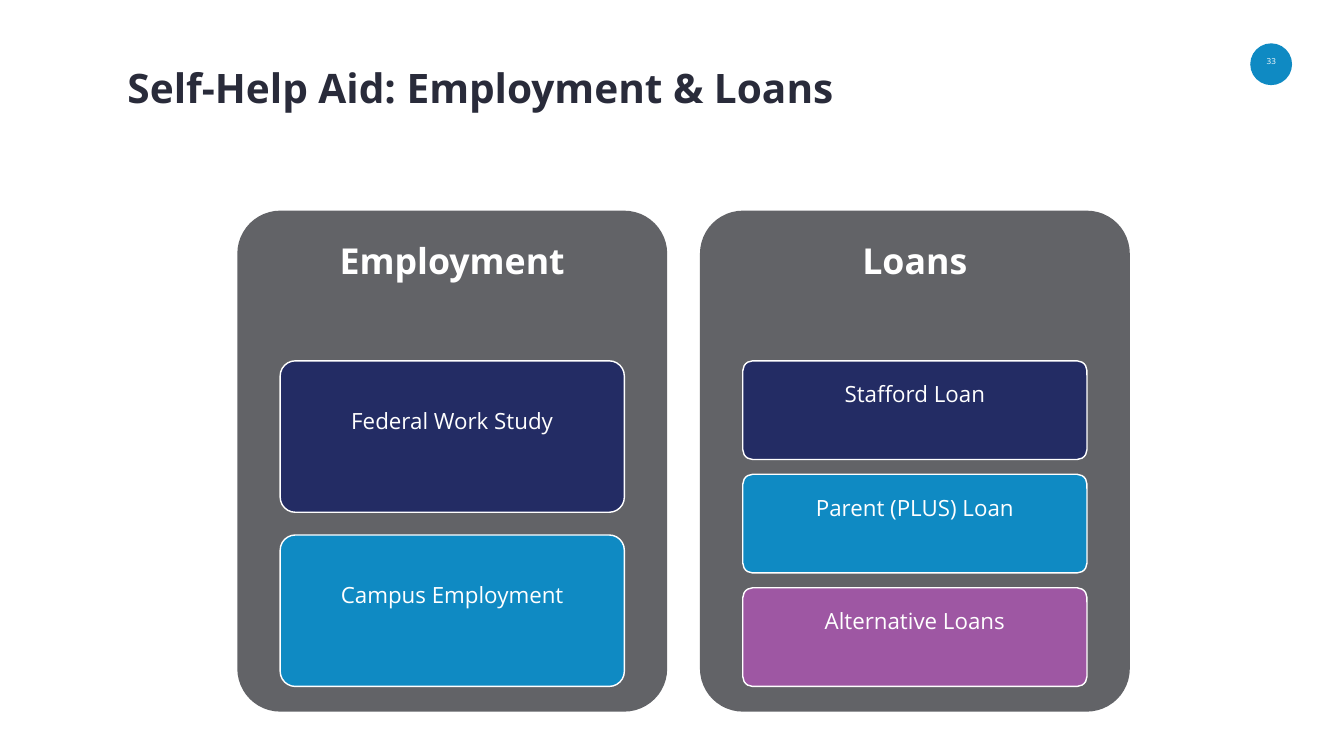
from dataclasses import dataclass

from pptx import Presentation
from pptx.dml.color import RGBColor
from pptx.enum.shapes import MSO_SHAPE
from pptx.enum.text import MSO_ANCHOR, MSO_AUTO_SIZE, PP_ALIGN
from pptx.util import Inches, Pt

ROUNDED, OVAL = MSO_SHAPE.ROUNDED_RECTANGLE, MSO_SHAPE.OVAL
TOP, MIDDLE = MSO_ANCHOR.TOP, MSO_ANCHOR.MIDDLE
LEFT, CENTER = PP_ALIGN.LEFT, PP_ALIGN.CENTER
GROW, FIXED = MSO_AUTO_SIZE.SHAPE_TO_FIT_TEXT, MSO_AUTO_SIZE.NONE


@dataclass(frozen=True)
class Theme:
    """Fonts, colours and type sizes of the slide."""
    font: str = "Open Sans"
    ink: str = "292B3A"
    white: str = "FFFFFF"
    panel: str = "626367"
    navy: str = "232C64"
    blue: str = "0F8AC3"
    purple: str = "9E57A3"
    title_size: int = 100
    heading_size: int = 88
    card_size: int = 55
    number_size: int = 20
    baseline: int = 55000


THEME = Theme()
CARD_COLORS = (THEME.navy, THEME.blue, THEME.purple)
AID_TYPES = {
    "Employment": ("Federal Work Study", "Campus Employment"),
    "Loans": ("Stafford Loan", "Parent (PLUS) Loan", "Alternative Loans"),
}
PANEL_LEFT, PANEL_TOP, PANEL_WIDTH, PANEL_HEIGHT = 4.71, 4.18, 8.53, 9.94
PANEL_STEP = 9.18
HEADING_HEIGHT = 2.98
CARD_INSET, CARD_WIDTH = 0.85, 6.83
CARDS_TOP, CARDS_HEIGHT = 7.16, 6.46
GAP_RATIO = 0.15


def apply_format(target, values):
    """Set each attribute of target from a dict of values."""
    for name, value in values.items():
        setattr(target, name, value)


def set_text(holder, text, size, color=THEME.white, bold=False, align=CENTER,
             spacing=0.9, anchor=MIDDLE, margins=(0.06, 0.06), fit=FIXED):
    """Write one raised line of text into a shape or placeholder."""
    frame = holder.text_frame
    side, end = (Inches(margin) for margin in margins)
    apply_format(frame, {
        "word_wrap": True, "auto_size": fit, "vertical_anchor": anchor,
        "margin_left": side, "margin_right": side,
        "margin_top": end, "margin_bottom": end,
    })
    paragraph = frame.paragraphs[0]
    apply_format(paragraph, {"alignment": align, "line_spacing": spacing})
    run = paragraph.add_run()
    run.text = text
    apply_format(run.font, {"name": THEME.font, "size": Pt(size), "bold": bold})
    run.font.color.rgb = RGBColor.from_string(color)
    run.font._element.set("baseline", str(THEME.baseline))


def add_block(slide, kind, box, fill, outlined=False):
    """Add a filled shape, with a white outline if asked for."""
    block = slide.shapes.add_shape(kind, *map(Inches, box))
    block.shadow.inherit = False
    block.fill.solid()
    block.fill.fore_color.rgb = RGBColor.from_string(fill)
    if kind == ROUNDED:
        block.adjustments[0] = 0.1
    if outlined:
        block.line.color.rgb = RGBColor.from_string(THEME.white)
        block.line.width = Pt(2)
    else:
        block.line.fill.background()
    return block


def add_title(slide, text):
    """Move the title placeholder into place and fill it."""
    title = slide.shapes.title
    apply_format(title, {"left": Inches(2.47), "top": Inches(0.98),
                         "width": Inches(17.58), "height": Inches(2.8)})
    set_text(title, text, THEME.title_size, THEME.ink, bold=True,
             align=LEFT, spacing=0.8, fit=GROW)


def add_page_number(slide, number):
    """Add the page number on its round badge."""
    add_block(slide, OVAL, (24.81, 0.86, 0.83, 0.83), THEME.blue)
    label = slide.shapes.add_textbox(*map(Inches, (24.76, 1.05, 0.94, 0.49)))
    set_text(label, number, THEME.number_size, spacing=1.0, anchor=TOP, fit=GROW)


def add_panel(slide, left, heading, cards):
    """Add a panel with its heading and an evenly divided stack of cards."""
    add_block(slide, ROUNDED, (left, PANEL_TOP, PANEL_WIDTH, PANEL_HEIGHT), THEME.panel)
    label = slide.shapes.add_textbox(
        *map(Inches, (left, PANEL_TOP, PANEL_WIDTH, HEADING_HEIGHT)))
    set_text(label, heading, THEME.heading_size, bold=True, margins=(0.37, 0.37))

    count = len(cards)
    height = CARDS_HEIGHT / (count + (count - 1) * GAP_RATIO)
    for row, (name, color) in enumerate(zip(cards, CARD_COLORS)):
        top = CARDS_TOP + row * height * (1 + GAP_RATIO)
        card = add_block(slide, ROUNDED, (left + CARD_INSET, top, CARD_WIDTH, height),
                         color, outlined=True)
        set_text(card, name, THEME.card_size, margins=(0.15, 0.11))


def main():
    """Build the slide and save it."""
    deck = Presentation()
    apply_format(deck, {"slide_width": Inches(26.67), "slide_height": Inches(15)})
    slide = deck.slides.add_slide(deck.slide_layouts.get_by_name("Title Only"))
    add_page_number(slide, "33")
    add_title(slide, "Self-Help Aid: Employment & Loans")
    for column, (heading, cards) in enumerate(AID_TYPES.items()):
        add_panel(slide, PANEL_LEFT + column * PANEL_STEP, heading, cards)
    deck.save("out.pptx")


if __name__ == "__main__":
    main()
